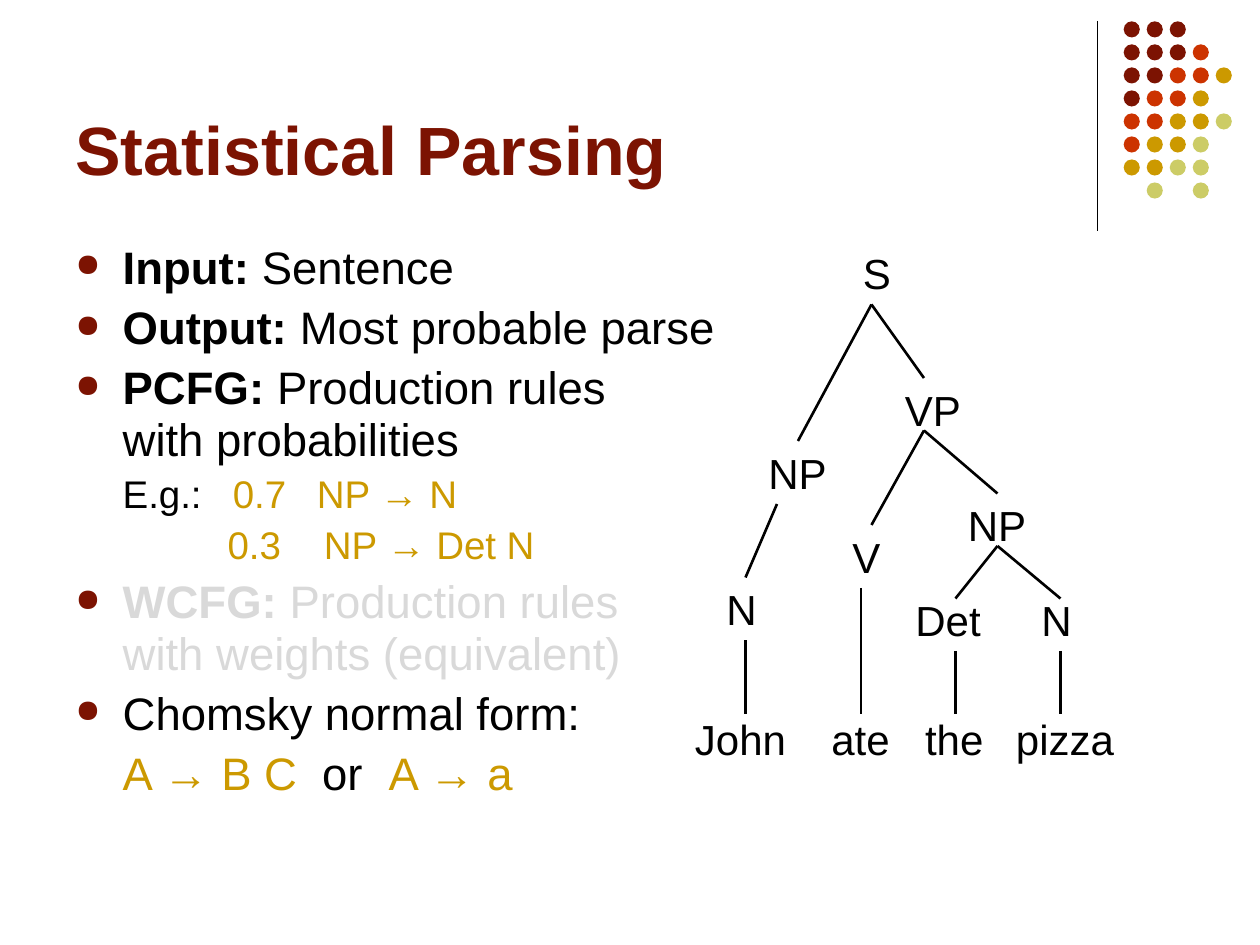
from lxml.etree import SubElement
from pptx import Presentation
from pptx.dml.color import RGBColor
from pptx.enum.shapes import MSO_CONNECTOR, MSO_SHAPE
from pptx.enum.text import MSO_ANCHOR
from pptx.oxml.ns import qn
from pptx.util import Pt

BLACK, MAROON, RED, GOLD, OLIVE, GREY = (
    "000000", "7C1302", "CC3300", "CC9900", "CCCC66", "D9D9D9")

TITLE = "Statistical Parsing"

# Each paragraph: size, bulleted, tab stops, runs of (text, bold, colour)
BODY = [
    (26, True, (), [("Input:", True, BLACK), (" Sentence", False, BLACK)]),
    (26, True, (), [("Output:", True, BLACK), (" Most probable parse", False, BLACK)]),
    (26, True, (), [("PCFG:", True, BLACK),
                    (" Production rules\nwith probabilities", False, BLACK)]),
    (22, False, (27, 90, 138), [("\tE.g.:", False, BLACK), ("\t0.7\tNP → N", False, GOLD)]),
    (22, False, (87, 142), [("\t0.3\tNP → Det N", False, GOLD)]),
    (26, True, (), [("WCFG:", True, GREY),
                    (" Production rules\nwith weights (equivalent)", False, GREY)]),
    (26, True, (), [("Chomsky normal form:", False, BLACK)]),
    (26, False, (27, 141, 179), [("\tA → B C", False, GOLD), ("\tor", False, BLACK),
                                 ("\tA → a", False, GOLD)]),
]

# Tree labels: text, left, top, width
LABELS = [
    ("S", 486, 138, 30),
    ("John\tate\tthe\tpizza", 390, 404, 262),
    ("NP", 432, 252, 47.5),
    ("VP", 510, 216, 47),
    ("N", 408, 330, 32),
    ("V", 480, 300, 30),
    ("NP", 546, 282, 47.5),
    ("Det", 516, 336, 52),
    ("N", 588, 336, 32),
]
WORD_STOPS = (78, 131.5, 183.5)

# Tree branches: parent point, then the child points
BRANCHES = [
    ((498, 174), [(456, 252), (528, 216)]),
    ((444, 288), [(426, 330)]),
    ((426, 366), [(426, 408)]),
    ((528, 246), [(498, 300), (570, 282)]),
    ((570, 312), [(546, 342), (606, 342)]),
    ((492, 336), [(492, 408)]),
    ((546, 372), [(546, 408)]),
    ((606, 372), [(606, 408)]),
]

DOT_ROWS = ["MMM", "MMMR", "MMRRG", "MRRG", "RRGGO", "RGGO", "GGOO", " O O"]
DOT_COLOURS = {"M": MAROON, "R": RED, "G": GOLD, "O": OLIVE}
DOT_LEFT, DOT_TOP, DOT_PITCH, DOT_SIZE = 642.1, 12.2, 13.15, 9.2


def rgb(colour):
    return RGBColor.from_string(colour)


def add_line(slide, start, end, width):
    line = slide.shapes.add_connector(
        MSO_CONNECTOR.STRAIGHT, *(Pt(value) for value in (*start, *end)))
    line.line.color.rgb = rgb(BLACK)
    line.line.width = Pt(width)
    SubElement(line._element.spPr, qn("a:effectLst"))


def add_text_frame(slide, left, top, width, height, wrap=True):
    box = slide.shapes.add_textbox(Pt(left), Pt(top), Pt(width), Pt(height))
    box.text_frame.word_wrap = wrap
    return box.text_frame


def set_font(font, size, colour, bold=False):
    font.name = "Arial"
    font.size = Pt(size)
    font.bold = bold
    font.color.rgb = rgb(colour)


def add_bullet(paragraph):
    properties = paragraph._p.get_or_add_pPr()
    properties.set("marL", str(Pt(27)))
    properties.set("indent", str(Pt(-27)))
    SubElement(SubElement(properties, qn("a:buClr")), qn("a:srgbClr"), val=MAROON)
    SubElement(properties, qn("a:buSzPct"), val="70000")
    SubElement(properties, qn("a:buChar"), char="●")


def add_tab_stops(paragraph, stops):
    tabs = SubElement(paragraph._p.get_or_add_pPr(), qn("a:tabLst"))
    for stop in stops:
        SubElement(tabs, qn("a:tab"), pos=str(Pt(stop)), algn="l")


def add_runs(paragraph, size, runs):
    for text, bold, colour in runs:
        for index, part in enumerate(text.split("\n")):
            if index:
                paragraph.add_line_break()
            run = paragraph.add_run()
            run.text = part
            set_font(run.font, size, colour, bold)


def add_dots(slide):
    for row, pattern in enumerate(DOT_ROWS):
        for column, key in enumerate(pattern):
            if key == " ":
                continue
            dot = slide.shapes.add_shape(
                MSO_SHAPE.OVAL, Pt(DOT_LEFT + column * DOT_PITCH),
                Pt(DOT_TOP + row * DOT_PITCH), Pt(DOT_SIZE), Pt(DOT_SIZE))
            dot.shadow.inherit = False
            dot.fill.solid()
            dot.fill.fore_color.rgb = rgb(DOT_COLOURS[key])
            dot.line.fill.background()


def add_title(slide):
    frame = add_text_frame(slide, 36, 9.4, 594, 102)
    frame.vertical_anchor = MSO_ANCHOR.BOTTOM
    paragraph = frame.paragraphs[0]
    paragraph.text = TITLE
    set_font(paragraph.font, 39, MAROON, True)


def add_body(slide):
    frame = add_text_frame(slide, 36, 135.4, 384, 338)
    for index, (size, bulleted, stops, runs) in enumerate(BODY):
        paragraph = frame.add_paragraph() if index else frame.paragraphs[0]
        if bulleted:
            add_bullet(paragraph)
        if stops:
            add_tab_stops(paragraph, stops)
        paragraph.line_spacing = 0.94
        if index:
            paragraph.space_before = Pt(size * 0.2)
        add_runs(paragraph, size, runs)


def add_tree(slide):
    for text, left, top, width in LABELS:
        has_tabs = "\t" in text
        frame = add_text_frame(slide, left, top, width, 36, wrap=has_tabs)
        paragraph = frame.paragraphs[0]
        paragraph.text = text
        if has_tabs:
            add_tab_stops(paragraph, WORD_STOPS)
        set_font(paragraph.font, 24, BLACK)
    for parent, children in BRANCHES:
        for child in children:
            add_line(slide, parent, child, 1.5)


def main():
    presentation = Presentation()
    presentation.slide_width, presentation.slide_height = Pt(720), Pt(540)
    slide = presentation.slides.add_slide(presentation.slide_layouts[6])
    add_line(slide, (627, 12), (627, 132), 0.75)
    add_dots(slide)
    add_title(slide)
    add_body(slide)
    add_tree(slide)
    presentation.save("out.pptx")


if __name__ == "__main__":
    main()
